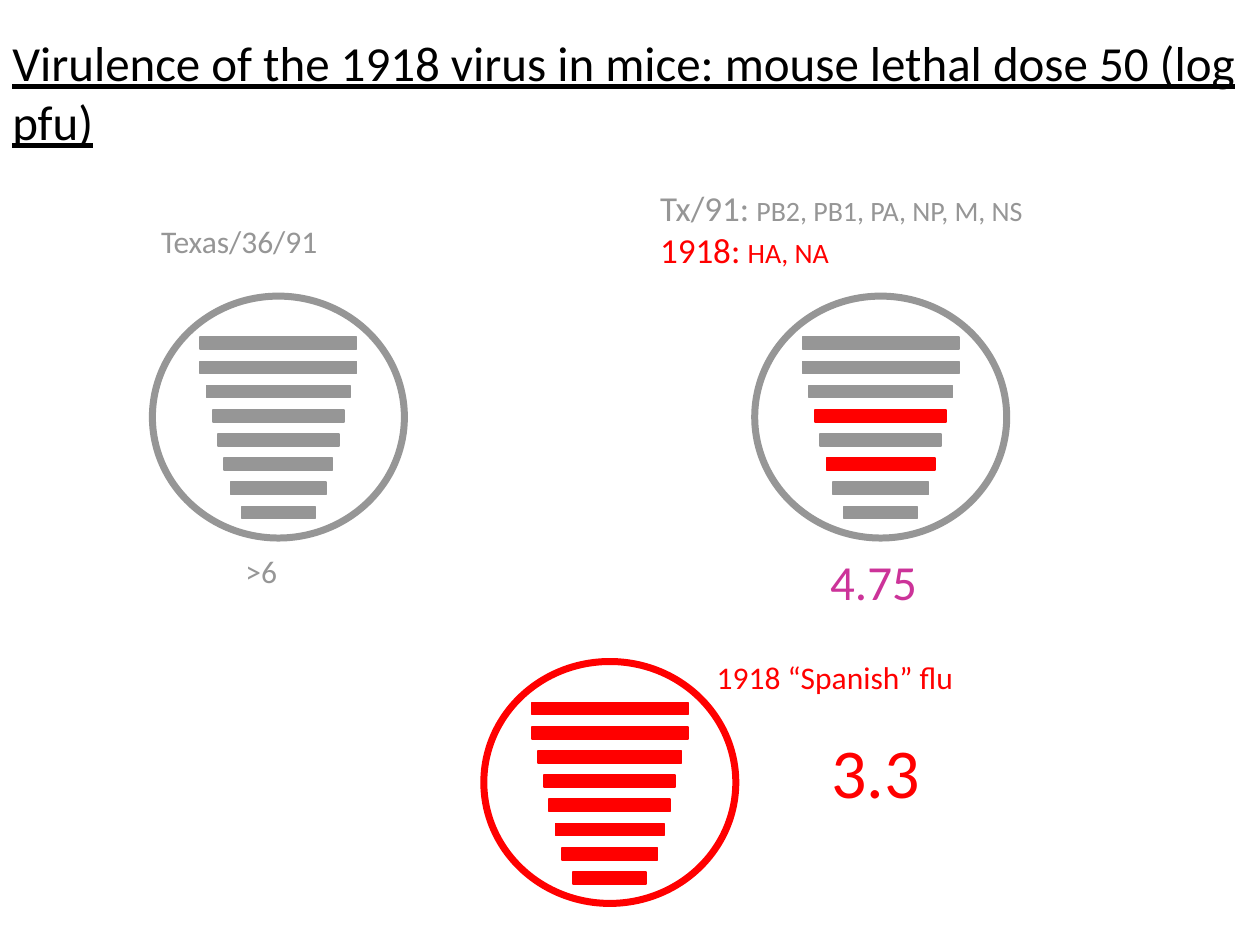
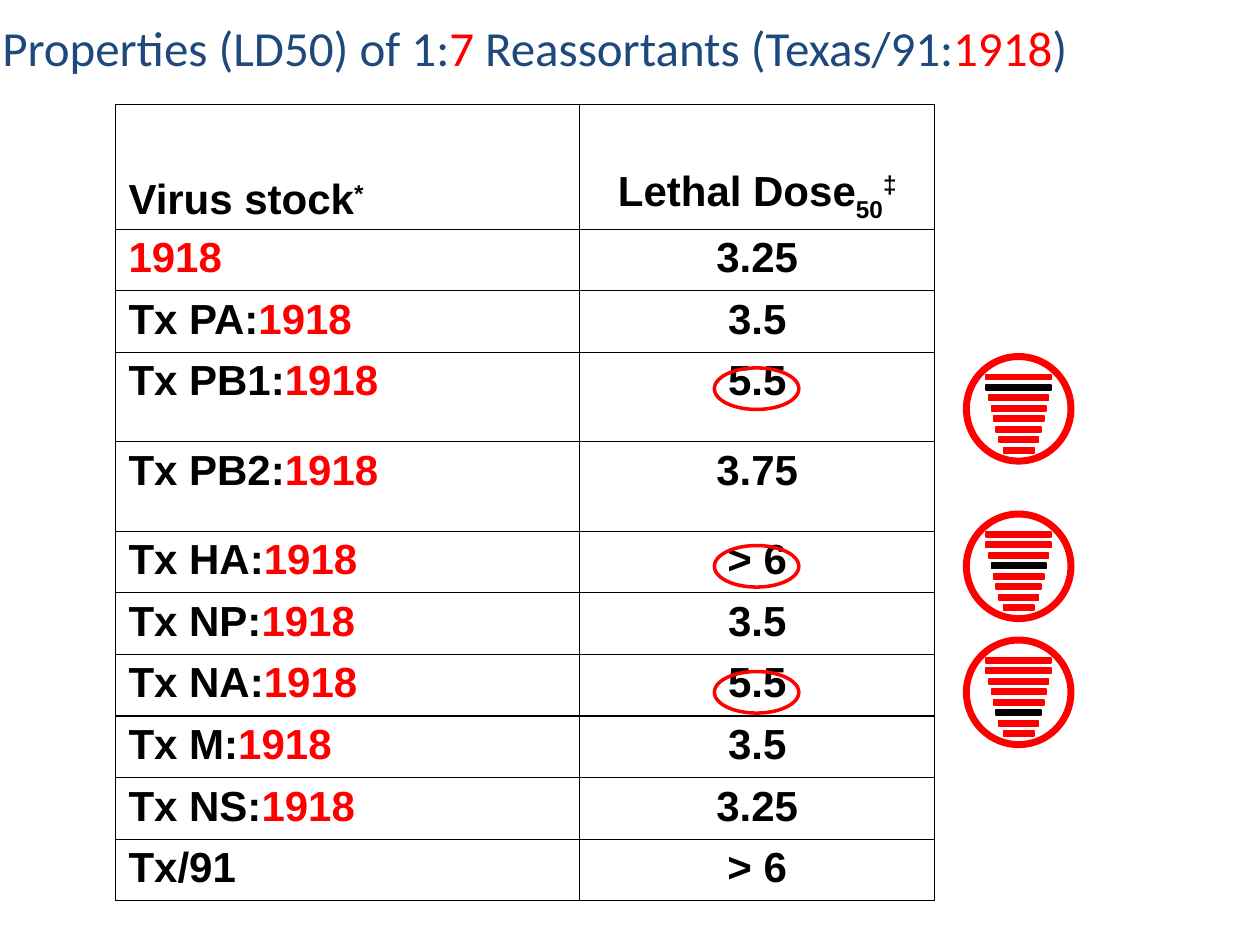
import pptx
import pptx.dml.color
import pptx.enum.shapes
import pptx.enum.text
import pptx.oxml
import pptx.oxml.ns
import pptx.util
from pptx.util import Inches, Pt

RGB = pptx.dml.color.RGBColor
SHAPE = pptx.enum.shapes.MSO_SHAPE
ALIGN = pptx.enum.text.PP_ALIGN
ANCHOR = pptx.enum.text.MSO_ANCHOR

BLACK = RGB(0x00, 0x00, 0x00)
GRAY = RGB(0x96, 0x96, 0x96)
RED = RGB(0xFF, 0x00, 0x00)
PINK = RGB(0xCC, 0x33, 0x99)
NAVY = RGB(0x1F, 0x49, 0x7D)

BODY = "Calibri"
GRID = "Arial"
TITLE = 28

# Gene segments, longest first, with bar width as a share of the virion width
GENES = {"PB2": 0.62, "PB1": 0.62, "PA": 0.57, "HA": 0.52,
         "NP": 0.48, "NA": 0.43, "M": 0.38, "NS": 0.29}

DOSES = [("PA", "3.5"), ("PB1", "5.5"), ("PB2", "3.75"), ("HA", "> 6"),
         ("NP", "3.5"), ("NA", "5.5"), ("M", "3.5"), ("NS", "3.25")]
TALL = {"PB1", "PB2"}


def add_run(para, text, size, color, font=BODY, bold=None, line=None, base=0):
    run = para.add_run()
    run.text = text
    run.font.size = Pt(size)
    run.font.name = font
    run.font.bold = bold
    run.font.underline = line
    run.font.color.rgb = color
    if base:
        run._r.get_or_add_rPr().set("baseline", str(base * 1000))


def add_text(slide, left, top, width, height, *lines, line=None):
    """Add a text box; each line is a list of (text, size, color) runs."""
    box = slide.shapes.add_textbox(Inches(left), Inches(top),
                                   Inches(width), Inches(height))
    frame = box.text_frame
    frame.word_wrap = True
    for i, runs in enumerate(lines):
        para = frame.add_paragraph() if i else frame.paragraphs[0]
        for text, size, color in runs:
            add_run(para, text, size, color, line=line)


def add_part(shapes, kind, left, top, width, height, color, weight, solid):
    part = shapes.add_shape(kind, Inches(left), Inches(top),
                            Inches(width), Inches(height))
    part.shadow.inherit = False
    part.line.color.rgb = color
    part.line.width = Pt(weight)
    if solid:
        part.fill.solid()
        part.fill.fore_color.rgb = color
    else:
        part.fill.background()


def add_ring(shapes, left, top, width, height, color, weight):
    add_part(shapes, SHAPE.OVAL, left, top, width, height, color, weight, False)


def add_virus(slide, left, top, width, height, color, swaps=(), other=RED):
    """Draw a virion whose genes named in swaps take the other colour."""
    shapes = slide.shapes.add_group_shape().shapes
    add_ring(shapes, left, top, width, height, color, 4)
    for i, (gene, share) in enumerate(GENES.items()):
        bar = share * width
        add_part(shapes, SHAPE.RECTANGLE, left + (width - bar) / 2,
                 top + height * (0.17 + 0.1 * i), bar, 0.05 * height,
                 other if gene in swaps else color, 1, True)


def set_edges(cell, top, bottom):
    """Draw black cell borders, with the given top and bottom widths."""
    props = cell._tc.get_or_add_tcPr()
    for side, weight in zip("LRTB", (0.75, 0.75, top, bottom)):
        props.append(pptx.oxml.parse_xml(
            f'<a:ln{side} {pptx.oxml.ns.nsdecls("a")} w="{Pt(weight)}">'
            f'<a:solidFill><a:srgbClr val="{BLACK}"/></a:solidFill>'
            f'</a:ln{side}>'))


def add_doses(slide):
    head = ([("Virus stock", BLACK, 0), ("*", BLACK, 30)],
            [("Lethal Dose", BLACK, 0), ("50", BLACK, -30), ("‡", BLACK, 30)])
    rows = [(0.99, *head),
            (0.43, [("1918", RED, 0)], [("3.25", BLACK, 0)])]
    for gene, dose in DOSES:
        rows.append((0.71 if gene in TALL else 0.43,
                     [(f"Tx {gene}:", BLACK, 0), ("1918", RED, 0)],
                     [(dose, BLACK, 0)]))
    rows.append((0.43, [("Tx/91", BLACK, 0)], [("> 6", BLACK, 0)]))

    table = slide.shapes.add_table(len(rows), 2, Inches(0.92), Inches(0.83),
                                   Inches(6.5), Inches(5.85)).table
    table.first_row = table.horz_banding = False
    for col, width in zip(table.columns, (3.68, 2.82)):
        col.width = Inches(width)
    last = len(rows) - 1
    for r, (height, *cells) in enumerate(rows):
        table.rows[r].height = Inches(height)
        for c, runs in enumerate(cells):
            cell = table.cell(r, c)
            set_edges(cell, 1 if r < 2 else 0.75, 1 if r in (0, last) else 0.75)
            cell.fill.background()
            cell.margin_top = cell.margin_bottom = Pt(3.2)
            cell.vertical_anchor = ANCHOR.TOP if r else ANCHOR.BOTTOM
            para = cell.text_frame.paragraphs[0]
            para.alignment = ALIGN.CENTER if c else ALIGN.LEFT
            for text, color, base in runs:
                add_run(para, text, 24, color, GRID, bold=True, base=base)


def draw_mice(slide):
    size = (2, 1.92)
    add_virus(slide, 1.21, 2.35, *size, GRAY)
    add_text(slide, 1.18, 1.71, 2.07, 0.5, [("Texas/36/91", 18, GRAY)])
    add_text(slide, 1.85, 4.33, 0.73, 0.5, [(">6", 18, GRAY)])

    add_virus(slide, 5.99, 2.35, *size, GRAY, ("HA", "NA"))
    add_text(slide, 5.14, 1.43, 3.69, 0.9, *(
        [(name, 20, color), (" ", 18, color), (genes, 16, color)]
        for name, genes, color in (("Tx/91:", "PB2, PB1, PA, NP, M, NS", GRAY),
                                   ("1918:", "HA, NA", RED))))
    add_text(slide, 6.49, 4.33, 0.99, 0.57, [("4.75", 28, PINK)])

    add_text(slide, 0, 0.21, 10, 1.04,
             [("Virulence of the 1918 virus in mice: mouse lethal dose 50 "
               "(log pfu)", TITLE, BLACK)], line=True)

    add_virus(slide, 3.84, 5.25, *size, RED)
    add_text(slide, 5.59, 5.17, 3.16, 0.5, [("1918 “Spanish” flu", 18, RED)])
    add_text(slide, 6.5, 5.73, 0.97, 0.77, [("3.3", 40, RED)])


def draw_mixes(slide):
    add_doses(slide)
    add_text(slide, -0.08, 0.09, 10.25, 0.57,
             [("Properties (LD50) of 1:", TITLE, NAVY), ("7", TITLE, RED),
              (" Reassortants (Texas/91:", TITLE, NAVY),
              ("1918", TITLE, RED), (")", TITLE, NAVY)])
    for gene, ring, top in (("PB1", 2.92, 2.83), ("HA", 4.33, 4.08),
                            ("NA", 5.33, 5.08)):
        add_ring(slide.shapes, 5.67, ring, 0.67, 0.33, RED, 2)
        add_virus(slide, 7.67, top, 0.83, 0.83, RED, (gene,), BLACK)


def main():
    deck = pptx.Presentation()
    deck.slide_width = Inches(10)
    deck.slide_height = Inches(7.5)
    for draw in (draw_mice, draw_mixes):
        draw(deck.slides.add_slide(deck.slide_layouts[6]))
    deck.save("out.pptx")


if __name__ == "__main__":
    main()
